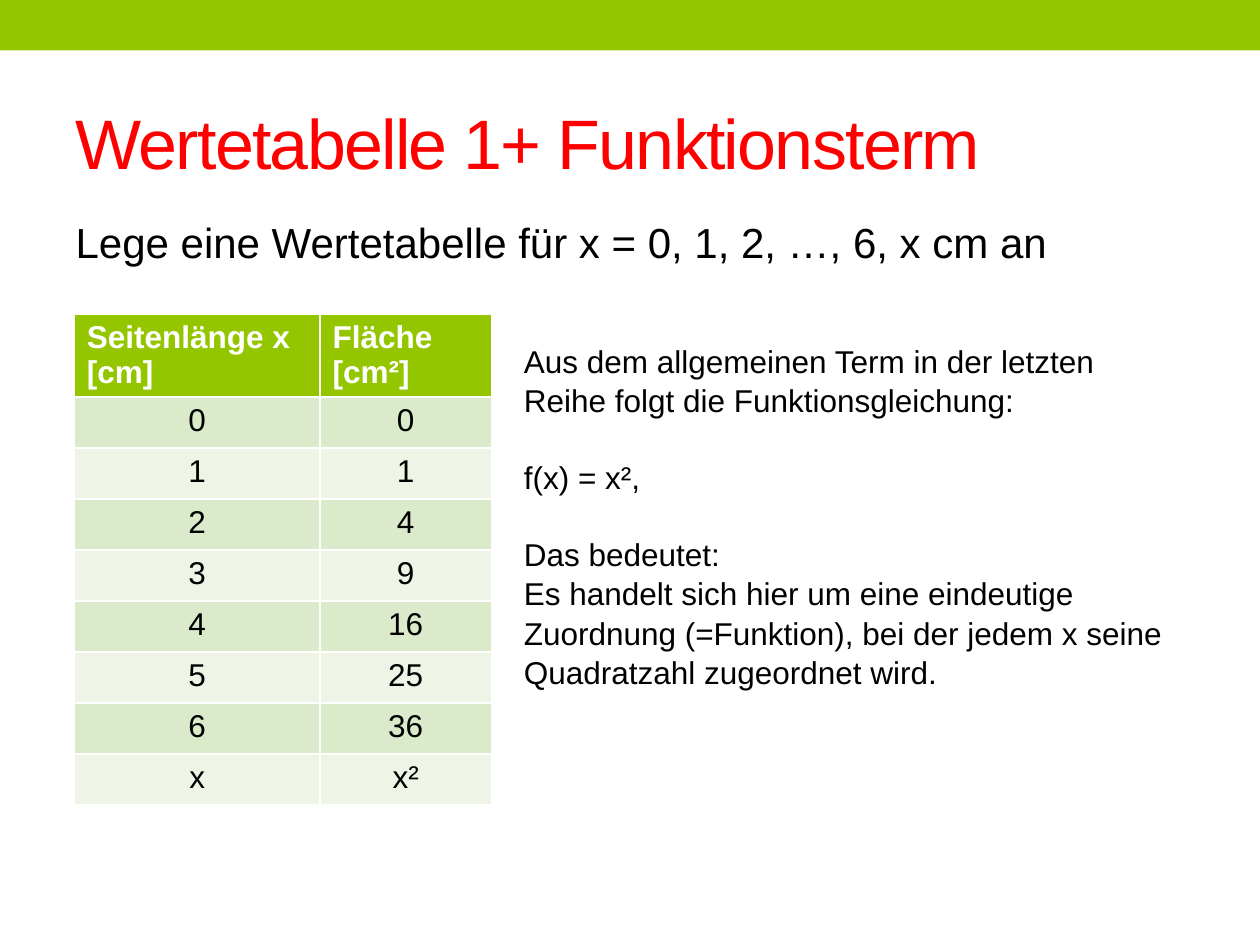
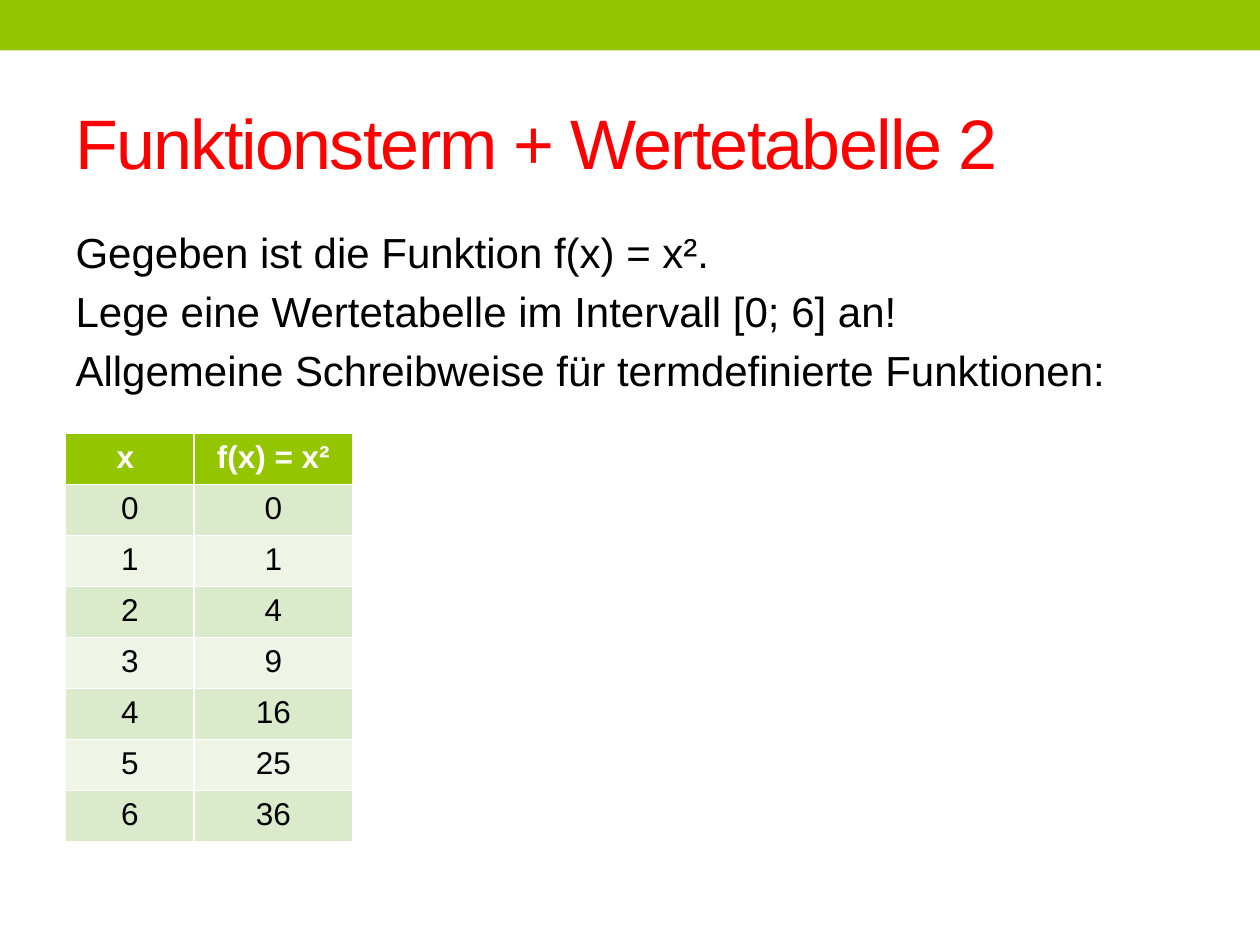
"""Build two slides on value tables for the square function."""
from pptx import Presentation
from pptx.dml.color import RGBColor
from pptx.enum.shapes import MSO_SHAPE
from pptx.enum.text import MSO_ANCHOR, MSO_AUTO_SIZE, PP_ALIGN
from pptx.util import Inches, Pt
from lxml import etree

RECT = MSO_SHAPE.RECTANGLE
MIDDLE = MSO_ANCHOR.MIDDLE
TOP = MSO_ANCHOR.TOP
FIXED = MSO_AUTO_SIZE.NONE
LEFT = PP_ALIGN.LEFT
CENTER = PP_ALIGN.CENTER

COLORS = {"green": "94C600", "red": "FF0000", "black": "000000",
          "white": "FFFFFF", "dark": "DCEACC", "light": "EEF5E7"}
LOOKS = {
    "title": {"size": Pt(40), "color": "red"},
    "body": {"size": Pt(24), "color": "black"},
    "text": {"size": Pt(18), "color": "black"},
    "cell": {"size": Pt(18), "color": "black", "bold": False},
    "head": {"size": Pt(18), "color": "white", "bold": True},
}
ROW = 3.24 / 8
SQUARES = [(str(n), str(n * n)) for n in range(7)]
SLIDES = [
    {"title": "Wertetabelle 1+ Funktionsterm",
     "body": ["Lege eine Wertetabelle für x = 0, 1, 2, …, 6, x cm an"],
     "box": (0.5, 1.67, 9, 0.67),
     "head": ("Seitenlänge x\n[cm]", "Fläche\n[cm²]"), "align": LEFT,
     "rows": SQUARES + [("x", "x²")],
     "spot": (0.59, 2.49), "cols": (1.95, 1.36)},
    {"title": "Funktionsterm + Wertetabelle 2",
     "body": ["Gegeben ist die Funktion f(x) = x².",
              "Lege eine Wertetabelle im Intervall [0; 6] an!",
              "Allgemeine Schreibweise für termdefinierte Funktionen:"],
     "box": (0.5, 1.75, 9, 5.33),
     "head": ("x ", "f(x) = x²"), "align": CENTER,
     "rows": SQUARES,
     "spot": (0.52, 3.44), "cols": (1.02, 1.26)},
]
NOTES = ["Aus dem allgemeinen Term in der letzten Reihe folgt die Funktionsgleichung:",
         "f(x) = x²,",
         "Das bedeutet:",
         "Es handelt sich hier um eine eindeutige Zuordnung (=Funktion), "
         "bei der jedem x seine Quadratzahl zugeordnet wird."]


def place(shape, box):
    for name, value in zip(("left", "top", "width", "height"), box):
        setattr(shape, name, Inches(value))


def write(frame, lines, look, align=LEFT):
    frame.text = "\n".join(lines)
    for para in frame.paragraphs:
        para.alignment = align
        font = para.runs[0].font
        font.name = "Arial"
        for name, value in LOOKS[look].items():
            if name == "color":
                font.color.rgb = RGBColor.from_string(COLORS[value])
            else:
                setattr(font, name, value)


deck = Presentation()
deck.slide_width, deck.slide_height = Inches(10), Inches(7.5)

for page in SLIDES:
    slide = deck.slides.add_slide(deck.slide_layouts[1])
    band = slide.shapes.add_shape(RECT, 0, 0, deck.slide_width, Inches(0.4))
    band.shadow.inherit = False
    band.fill.solid()
    band.fill.fore_color.rgb = RGBColor.from_string(COLORS["green"])
    band.line.fill.background()

    title, body = slide.placeholders
    place(title, (0.5, 0.58, 9, 1.08))
    place(body, page["box"])
    write(title.text_frame, [page["title"]], "title")
    write(body.text_frame, page["body"], "body")
    for shape, anchor in ((title, MIDDLE), (body, TOP)):
        shape.text_frame.auto_size = FIXED
        shape.text_frame.vertical_anchor = anchor
    title.text_frame.paragraphs[0].runs[0].font._element.set("spc", "-100")
    for para in body.text_frame.paragraphs:
        props = para._p.get_or_add_pPr()
        props.set("marL", "0")
        props.set("indent", "0")
        etree.SubElement(props, props.tag.replace("pPr", "buNone"))

    rows = [page["head"]] + page["rows"]
    left, top = page["spot"]
    grid = slide.shapes.add_table(
        len(rows), 2, Inches(left), Inches(top),
        Inches(sum(page["cols"])), Inches(ROW * len(rows))).table
    for col, width in zip(grid.columns, page["cols"]):
        col.width = Inches(width)
    for r, row in enumerate(rows):
        fill = ("dark" if r % 2 else "light") if r else "green"
        for c, text in enumerate(row):
            cell = grid.cell(r, c)
            cell.fill.solid()
            cell.fill.fore_color.rgb = RGBColor.from_string(COLORS[fill])
            write(cell.text_frame, text.split("\n"),
                  "cell" if r else "head", CENTER if r else page["align"])

notes = deck.slides[0].shapes.add_textbox(0, 0, 0, 0)
place(notes, (4.06, 2.65, 5.44, 2.83))
notes.text_frame.word_wrap = True
write(notes.text_frame, NOTES, "text")
for para in notes.text_frame.paragraphs:
    para.line_spacing = 1.04
for para in notes.text_frame.paragraphs[1:3]:
    para.space_before = Pt(21.6)

deck.save("out.pptx")
